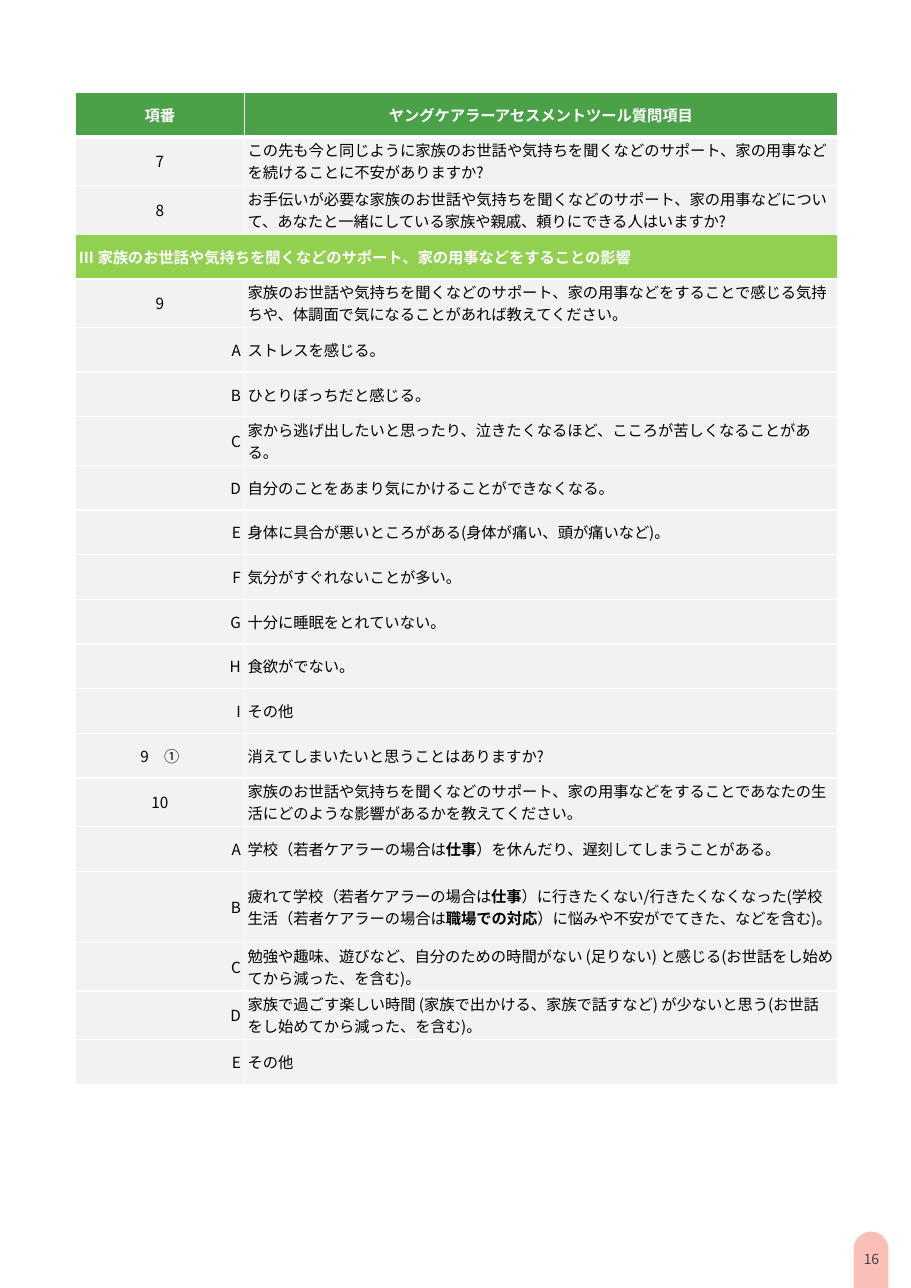
from dataclasses import dataclass

from lxml.etree import SubElement
from pptx import Presentation
from pptx.dml.color import RGBColor
from pptx.enum.lang import MSO_LANGUAGE_ID as LANGUAGE
from pptx.enum.shapes import MSO_SHAPE
from pptx.enum.text import MSO_ANCHOR as ANCHOR, PP_ALIGN as ALIGN
from pptx.oxml.ns import qn
from pptx.util import Cm, Pt

FONT = "Noto Sans CJK JP"
COLORS = {
    "header": "4AA147",
    "section": "92D050",
    "question": "F2F2F2",
    "white": "FFFFFF",
    "text": "000000",
    "page_tab": "FABFB7",
    "page_number": "414042",
}
COLUMN_WIDTHS = (Cm(3.89), Cm(13.67))
HEIGHT_BY_LINES = {1: Cm(1.03), 2: Cm(1.12), 3: Cm(1.64)}

HEADER = ("項番", "ヤングケアラーアセスメントツール質問項目")


@dataclass
class Question:
    """A numbered row; wording alternates between plain and bold parts."""
    number: str
    wording: tuple
    lines: int = 1
    anchor: ANCHOR = ANCHOR.MIDDLE


@dataclass
class Section:
    title: str
    lines: int = 1


ROWS = [
    Question("7", ("この先も今と同じように家族のお世話や気持ちを聞くなどのサポート、"
                   "家の用事などを続けることに不安がありますか?",), 2),
    Question("8", ("お手伝いが必要な家族のお世話や気持ちを聞くなどのサポート、家の用事などについて、"
                   "あなたと一緒にしている家族や親戚、頼りにできる人はいますか?",), 2, ANCHOR.BOTTOM),
    Section("III 家族のお世話や気持ちを聞くなどのサポート、家の用事などをすることの影響"),
    Question("9", ("家族のお世話や気持ちを聞くなどのサポート、家の用事などをすることで感じる気持ちや、"
                   "体調面で気になることがあれば教えてください。",), 2),
    Question("A", ("ストレスを感じる。",)),
    Question("B", ("ひとりぼっちだと感じる。",)),
    Question("C", ("家から逃げ出したいと思ったり、泣きたくなるほど、こころが苦しくなることがある。",), 2),
    Question("D", ("自分のことをあまり気にかけることができなくなる。",)),
    Question("E", ("身体に具合が悪いところがある(身体が痛い、頭が痛いなど)。",)),
    Question("F", ("気分がすぐれないことが多い。",)),
    Question("G", ("十分に睡眠をとれていない。",)),
    Question("H", ("食欲がでない。",)),
    Question("I", ("その他",)),
    Question("9　①", ("消えてしまいたいと思うことはありますか?",)),
    Question("10", ("家族のお世話や気持ちを聞くなどのサポート、家の用事などをすることで"
                    "あなたの生活にどのような影響があるかを教えてください。",), 2),
    Question("A", ("学校（若者ケアラーの場合は", "仕事", "）を休んだり、遅刻してしまうことがある。")),
    Question("B", ("疲れて学校（若者ケアラーの場合は", "仕事",
                   "）に行きたくない/行きたくなくなった(学校生活（若者ケアラーの場合は", "職場での対応",
                   "）に悩みや不安がでてきた、などを含む)。"), 3),
    Question("C", ("勉強や趣味、遊びなど、自分のための時間がない (足りない) と感じる"
                   "(お世話をし始めてから減った、を含む)。",), 2, ANCHOR.BOTTOM),
    Question("D", ("家族で過ごす楽しい時間 (家族で出かける、家族で話すなど) が少ないと思う"
                   "(お世話をし始めてから減った、を含む)。",), 2, ANCHOR.BOTTOM),
    Question("E", ("その他",)),
]


def rgb(name):
    return RGBColor.from_string(COLORS[name])


def add_run(paragraph, text, color, size=10, bold=False):
    run = paragraph.add_run()
    run.text = text
    run.font.size = Pt(size)
    run.font.bold = bold
    run.font.language_id = LANGUAGE.JAPANESE
    run.font.color.rgb = rgb(color)
    run.font.name = FONT
    SubElement(run.font._element, qn("a:ea"), typeface=FONT)


def set_borders(cell, top=1, bottom=1):
    properties = cell._tc.get_or_add_tcPr()
    for side, width in (("L", 1), ("R", 1), ("T", top), ("B", bottom)):
        line = SubElement(properties, qn(f"a:ln{side}"), w=str(Pt(width)))
        fill = SubElement(line, qn("a:solidFill"))
        SubElement(fill, qn("a:srgbClr"), val=COLORS["white"])


def style_cell(cell, fill, align, anchor=ANCHOR.MIDDLE, top=1, bottom=1):
    """Format a cell and return its paragraph, ready for runs."""
    set_borders(cell, top, bottom)
    cell.fill.solid()
    cell.fill.fore_color.rgb = rgb(fill)
    cell.margin_left = cell.margin_right = Cm(0.08)
    cell.margin_top = cell.margin_bottom = Cm(0.05)
    cell.vertical_anchor = anchor
    paragraph = cell.text_frame.paragraphs[0]
    paragraph.alignment = align
    paragraph._p.get_or_add_pPr().set("hangingPunct", "0")
    return paragraph


def fill_header(cells):
    for cell, label in zip(cells, HEADER):
        add_run(style_cell(cell, "header", ALIGN.CENTER, bottom=3), label, "white", bold=True)


def fill_section(cells, section):
    title, covered = cells
    title.merge(covered)
    add_run(style_cell(title, "section", ALIGN.LEFT), section.title, "white", bold=True)


def fill_question(cells, question, top):
    number, wording = cells
    align = ALIGN.CENTER if question.number[0].isdigit() else ALIGN.RIGHT
    add_run(style_cell(number, "question", align, top=top), question.number, "text")
    paragraph = style_cell(wording, "question", ALIGN.LEFT, question.anchor, top)
    for index, part in enumerate(question.wording):
        add_run(paragraph, part, "text", bold=index % 2 == 1)


def add_question_table(slide):
    heights = [HEIGHT_BY_LINES[1]] + [HEIGHT_BY_LINES[entry.lines] for entry in ROWS]
    table = slide.shapes.add_table(len(heights), 2, Cm(1.74), Cm(2.13),
                                   sum(COLUMN_WIDTHS), sum(heights)).table
    table.horz_banding = False
    table.first_row = False
    for column, width in zip(table.columns, COLUMN_WIDTHS):
        column.width = width
    for row, height in zip(table.rows, heights):
        row.height = height
    fill_header(table.rows[0].cells)
    for index, entry in enumerate(ROWS, start=1):
        cells = table.rows[index].cells
        if isinstance(entry, Section):
            fill_section(cells, entry)
        else:
            fill_question(cells, entry, top=3 if index == 1 else 1)


def add_page_tab(slide, number):
    tab = slide.shapes.add_shape(MSO_SHAPE.ROUND_2_SAME_RECTANGLE,
                                 Cm(19.68), Cm(28.4), Cm(0.8), Cm(1.3))
    tab.adjustments[0] = 0.5
    tab.shadow.inherit = False
    tab.fill.solid()
    tab.fill.fore_color.rgb = rgb("page_tab")
    tab.line.fill.background()

    frame = slide.shapes.add_textbox(Cm(19.81), Cm(28.82), Cm(0.56), Cm(0.43)).text_frame
    frame.word_wrap = True
    frame.vertical_anchor = ANCHOR.MIDDLE
    frame.margin_left = frame.margin_right = frame.margin_top = frame.margin_bottom = 0
    paragraph = frame.paragraphs[0]
    paragraph.alignment = ALIGN.CENTER
    add_run(paragraph, number, "page_number", size=9)


def main():
    deck = Presentation()
    deck.slide_width, deck.slide_height = Cm(21), Cm(29.7)
    slide = deck.slides.add_slide(deck.slide_layouts[6])
    add_page_tab(slide, "16")
    add_question_table(slide)
    deck.save("out.pptx")


if __name__ == "__main__":
    main()
